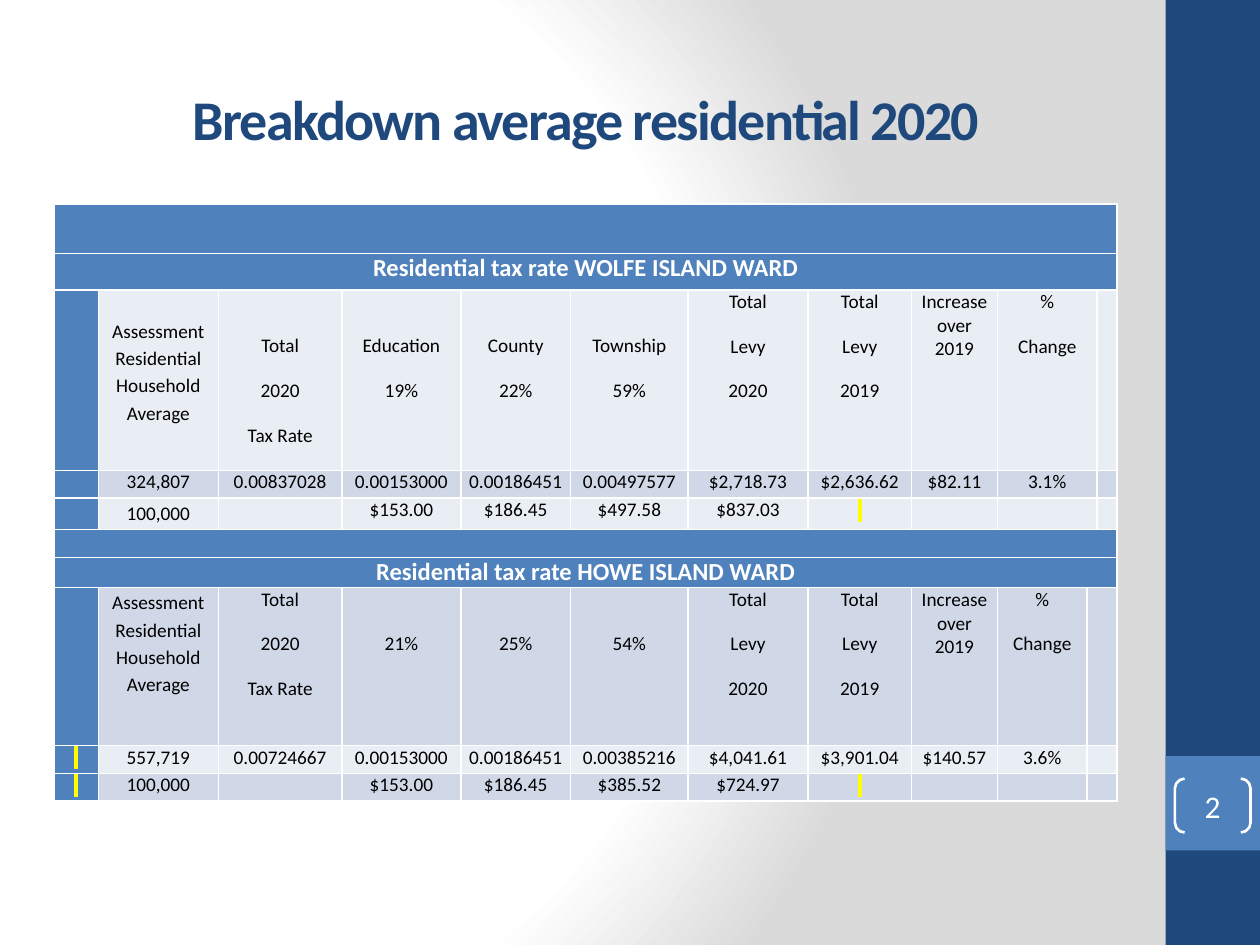
from lxml import etree
from pptx import Presentation
from pptx.dml.color import RGBColor
from pptx.enum.shapes import MSO_SHAPE
from pptx.enum.text import MSO_ANCHOR, PP_ALIGN
from pptx.oxml.ns import qn
from pptx.util import Inches, Pt

RECTANGLE, BRACKETS = MSO_SHAPE.RECTANGLE, MSO_SHAPE.DOUBLE_BRACKET
CENTER, MIDDLE = PP_ALIGN.CENTER, MSO_ANCHOR.MIDDLE
WHITE = RGBColor(0xFF, 0xFF, 0xFF)
BLACK = RGBColor(0, 0, 0)
GRAY = RGBColor(0xDA, 0xDA, 0xDA)
NAVY = RGBColor(0x1F, 0x49, 0x7D)
BLUE = RGBColor(0x4F, 0x81, 0xBD)
BANDS = (RGBColor(0xE9, 0xED, 0xF4), RGBColor(0xD0, 0xD8, 0xE8))
YELLOW = RGBColor(0xFF, 0xFF, 0x00)
FONT = "Calibri"
MARK = "\N{NO-BREAK SPACE}"

COLUMNS = (0.35, 0.95, 0.98, 0.94, 0.87, 0.93, 0.95, 0.82, 0.68, 0.71, 0.08, 0.15)
ROWS = (0.39, 0.29, 1.43, 0.22, 0.25, 0.22, 0.24, 1.25, 0.22, 0.22)
BANNER_ROWS = (0, 1, 5, 6)
LOOSE_ROWS = (2, 4, 7)
LINE_DROP, PARAGRAPH_DROP = 0.21, 0.35

ASSESSMENT = "Assessment\nResidential\nHousehold\nAverage"
TAX_RATE = "Total\n2020\nTax Rate"
LEVIES = ["Total\nLevy\n2020", "Total\nLevy\n2019", "Increase over 2019", "%\nChange"]
WARDS = [
    {
        "row": 1,
        "title": "Residential tax rate WOLFE ISLAND WARD",
        "merge": (9, 10),
        "drops": {1: LINE_DROP, **dict.fromkeys(range(2, 6), PARAGRAPH_DROP)},
        "body": [
            ["", ASSESSMENT, TAX_RATE, "Education\n19%", "County\n22%", "Township\n59%", *LEVIES],
            ["", "324,807", "0.00837028", "0.00153000", "0.00186451", "0.00497577",
             "$2,718.73", "$2,636.62", "$82.11", "3.1%"],
            ["", "100,000", "", "$153.00", "$186.45", "$497.58", "$837.03", MARK],
        ],
    },
    {
        "row": 6,
        "title": "Residential tax rate HOWE ISLAND WARD",
        "merge": (10, 11),
        "drops": dict.fromkeys(range(3, 6), PARAGRAPH_DROP),
        "body": [
            ["", ASSESSMENT, TAX_RATE, "21%", "25%", "54%", *LEVIES],
            [MARK, "557,719", "0.00724667", "0.00153000", "0.00186451", "0.00385216",
             "$4,041.61", "$3,901.04", "$140.57", "3.6%"],
            [MARK, "100,000", "", "$153.00", "$186.45", "$385.52", "$724.97", MARK],
        ],
    },
]


def style(para, size, color, bold=False):
    para.alignment = CENTER
    font = para.font
    font.name, font.size, font.bold = FONT, Pt(size), bold
    font.color.rgb = color


def paint_background(page):
    page.background.fill.gradient()
    gradient = page.element.find(".//" + qn("a:gradFill"))
    for child in list(gradient):
        gradient.remove(child)
    stops = etree.SubElement(gradient, qn("a:gsLst"))
    for percent, color in ((0, WHITE), (75, WHITE), (100, GRAY)):
        stop = etree.SubElement(stops, qn("a:gs"), pos=str(percent * 1000))
        etree.SubElement(stop, qn("a:srgbClr"), val=str(color))
    circle = etree.SubElement(gradient, qn("a:path"), {"path": "circle"})
    etree.SubElement(circle, qn("a:fillToRect"), l="20000", t="50000", r="100000", b="50000")


def add_panel(page, left, top, width, height, color):
    panel = page.shapes.add_shape(RECTANGLE, left, top, width, height)
    panel.shadow.inherit = False
    panel.fill.solid()
    panel.fill.fore_color.rgb = color
    panel.line.fill.background()


def add_sidebar(page, left, top, width, height):
    add_panel(page, left, top, width, height, NAVY)
    badge_top = top + int(height * 0.8)
    add_panel(page, left, badge_top, width, width, BLUE)
    brackets = page.shapes.add_shape(
        BRACKETS, left + int(width * 0.1), badge_top + int(width * 0.24),
        int(width * 0.8), int(width * 0.57))
    brackets.shadow.inherit = False
    brackets.adjustments[0] = 0.18
    brackets.fill.background()
    brackets.line.color.rgb = WHITE
    brackets.line.width = Pt(1.5)
    frame = brackets.text_frame
    frame.margin_left = frame.margin_right = frame.margin_top = frame.margin_bottom = 0
    frame.vertical_anchor = MIDDLE
    frame.text = "2"
    style(frame.paragraphs[0], 18, WHITE)


def add_title(page, left, top, width, height):
    box = page.shapes.add_textbox(left, top, width, height)
    frame = box.text_frame
    frame.word_wrap = True
    frame.vertical_anchor = MIDDLE
    para = frame.paragraphs[0]
    span = para.add_run()
    span.text = "Breakdown average residential 2020"
    span.font.size = Pt(32)
    span.font._element.set("spc", "-100")
    style(para, 32, NAVY, True)


def write_cell(cell, text, fill, size=11, color=BLACK, bold=False, drop=0, leading=None):
    cell.fill.solid()
    cell.fill.fore_color.rgb = fill
    cell.margin_left = cell.margin_right = Inches(0.06)
    cell.margin_top, cell.margin_bottom = Inches(drop), 0
    cell.text_frame.text = text
    for para in cell.text_frame.paragraphs:
        style(para, size, color, bold)
        if leading:
            para.line_spacing = leading
        else:
            para.space_after = Pt(12)
        if not text:
            etree.SubElement(para._p, qn("a:endParaRPr"), sz=str(size * 100))
    if text == MARK:
        properties = cell.text_frame.paragraphs[0].runs[0].font._element
        highlight = etree.SubElement(properties, qn("a:highlight"))
        etree.SubElement(highlight, qn("a:srgbClr"), val=str(YELLOW))


def fill_ward(table, ward):
    write_cell(table.cell(ward["row"], 0), ward["title"], BLUE, 14, WHITE, True)
    first, last = ward["merge"]
    for row, texts in enumerate(ward["body"], ward["row"] + 1):
        for column in range(len(COLUMNS)):
            place = column - 1 if column > last else column
            text = texts[place] if place < len(texts) and column <= 9 else ""
            is_header = row == ward["row"] + 1
            write_cell(
                table.cell(row, column), text, BANDS[row % 2] if column else BLUE,
                drop=ward["drops"].get(column, 0) if is_header else 0,
                leading=1.15 if column == 1 and row in LOOSE_ROWS else None)
        table.cell(row, first).merge(table.cell(row, last))


def add_tax_table(page, left, top, width, height):
    table = page.shapes.add_table(len(ROWS), len(COLUMNS), left, top, width, height).table
    table.horz_banding = False
    for column, share in zip(table.columns, COLUMNS):
        column.width = int(width * share / sum(COLUMNS))
    for row, share in zip(table.rows, ROWS):
        row.height = int(height * share / sum(ROWS))
    for row in BANNER_ROWS:
        for column in range(len(COLUMNS)):
            write_cell(table.cell(row, column), "", BLUE)
        table.cell(row, 0).merge(table.cell(row, len(COLUMNS) - 1))
    for ward in WARDS:
        fill_ward(table, ward)


def main():
    deck = Presentation()
    deck.slide_width, deck.slide_height = Inches(10), Inches(7.5)
    wide, high = deck.slide_width, deck.slide_height
    page = deck.slides.add_slide(deck.slide_layouts[6])
    paint_background(page)
    add_sidebar(page, int(wide * 0.925), 0, int(wide * 0.075), high)
    add_title(page, int(wide * 0.05), int(high * 0.04), int(wide * 0.83), int(high * 0.17))
    add_tax_table(page, Inches(0.43), Inches(1.62), Inches(8.43), Inches(4.74))
    deck.save("out.pptx")


if __name__ == "__main__":
    main()
